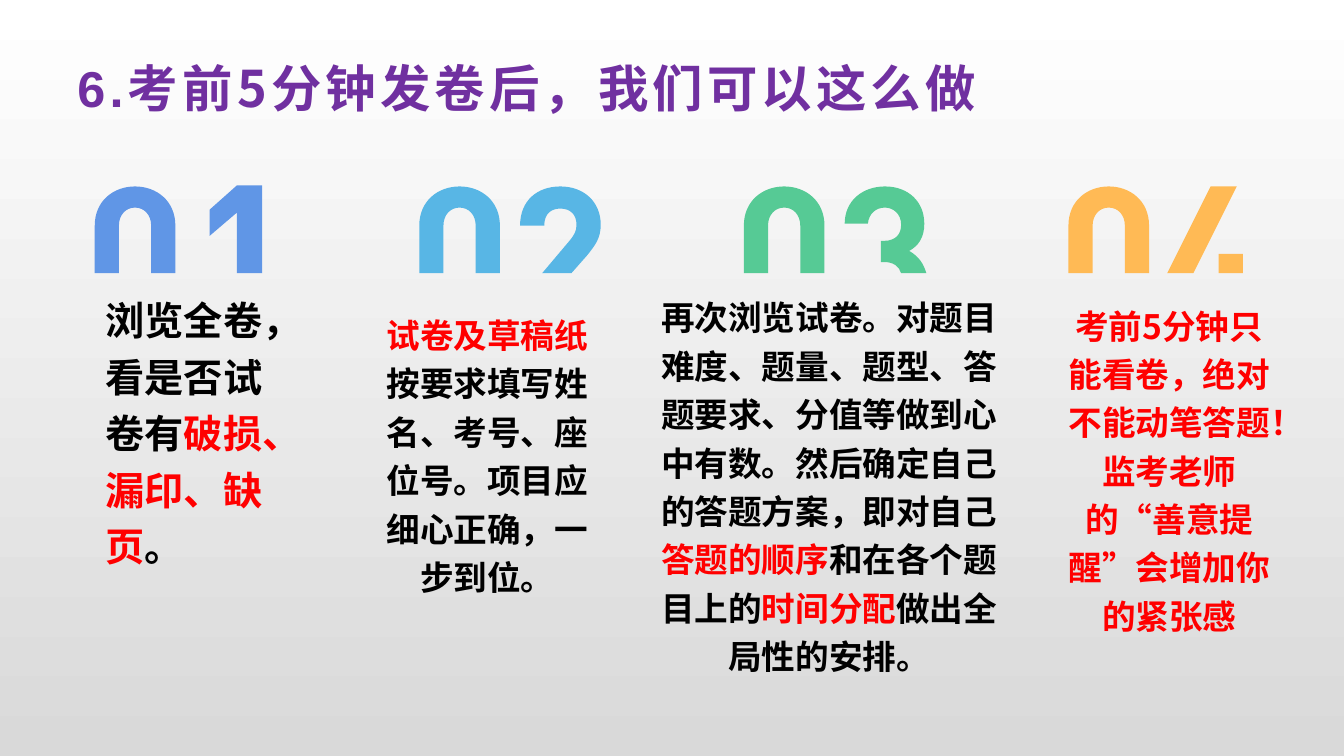
from dataclasses import dataclass

from lxml.etree import SubElement
from pptx import Presentation
from pptx.dml.color import RGBColor
from pptx.enum.text import MSO_ANCHOR, PP_ALIGN
from pptx.oxml.ns import qn
from pptx.util import Inches, Pt

INK = {
    "black": "000000", "red": "FF0000", "purple": "7030A0",
    "blue": "6096E6", "sky": "58B6E5", "green": "56CA95", "gold": "FFBA55",
    "top": "FFFFFF", "base": "D9D9D9",
}
HAN = "Noto Sans CJK SC"
LEFT, TOP, STEP = 0.94, 1.85, 3.22

# Each outline is a list of loops, in inches from the column's corner.
# A pair is a corner; six numbers are a Bezier curve from the last point.
Loop = list[tuple[float, ...]]
ZERO: list[Loop] = [[
    (0.4, 0), (0.61, 0, 0.8, 0.14, 0.8, 0.39), (0.8, 0.86), (0.56, 0.86),
    (0.56, 0.39), (0.56, 0.28, 0.49, 0.21, 0.4, 0.21),
    (0.31, 0.21, 0.24, 0.28, 0.24, 0.39), (0.24, 0.86), (0, 0.86),
    (0, 0.39), (0, 0.14, 0.19, 0, 0.4, 0),
]]
ONE: list[Loop] = [[
    (1.41, -0.01), (1.66, -0.01), (1.66, 0.86), (1.41, 0.86),
    (1.41, 0.26), (1.14, 0.49), (1.14, 0.23),
]]
TWO: list[Loop] = [[
    (1.4, 0), (1.63, 0, 1.8, 0.15, 1.8, 0.38),
    (1.8, 0.51, 1.75, 0.58, 1.66, 0.69), (1.51, 0.86), (1.22, 0.86),
    (1.49, 0.54), (1.54, 0.48, 1.56, 0.44, 1.56, 0.38),
    (1.56, 0.28, 1.5, 0.22, 1.4, 0.22),
    (1.32, 0.22, 1.24, 0.26, 1.24, 0.39), (1, 0.39),
    (1, 0.14, 1.17, 0, 1.4, 0),
]]
THREE: list[Loop] = [[
    (1.4, 0), (1.63, 0, 1.79, 0.15, 1.79, 0.37),
    (1.79, 0.51, 1.73, 0.59, 1.64, 0.64),
    (1.71, 0.68, 1.77, 0.74, 1.8, 0.83), (1.81, 0.86), (1.56, 0.86),
    (1.54, 0.79, 1.48, 0.75, 1.39, 0.75), (1.36, 0.75), (1.36, 0.54),
    (1.39, 0.54), (1.51, 0.54, 1.56, 0.47, 1.56, 0.38),
    (1.56, 0.27, 1.48, 0.21, 1.4, 0.21),
    (1.31, 0.21, 1.24, 0.27, 1.23, 0.37), (1, 0.37),
    (1, 0.14, 1.18, 0, 1.4, 0),
]]
FOUR: list[Loop] = [
    [(1.49, 0.67), (1.73, 0.67), (1.73, 0.86), (1.49, 0.86)],
    [(1.41, 0), (1.67, 0), (1.24, 0.86), (0.98, 0.86)],
]


@dataclass
class Run:
    text: str
    ink: str
    size: float = 24
    face: str = HAN
    track: int = 0


@dataclass
class Note:
    box: tuple[float, float, float, float]
    runs: list[Run]
    align: PP_ALIGN = PP_ALIGN.CENTER
    lead: float = 1.2


@dataclass
class Column:
    ink: str
    digit: list[Loop]
    note: Note


TITLE = Note((0.67, 0.48, 12, 0.77), [
    Run("6.", "purple", 36, "Arial", 300),
    Run("考前5分钟发卷后，我们可以这么做", "purple", 36, HAN, 300),
], PP_ALIGN.LEFT, 1.0)

COLUMNS = [
    Column("blue", ONE, Note((0.95, 2.76, 1.76, 2.98), [
        Run("浏览全卷，看是否试卷有", "black", 28),
        Run("破损、漏印、缺页", "red", 28),
        Run("。", "black", 28),
    ], PP_ALIGN.LEFT)),
    Column("sky", TWO, Note((3.71, 2.97, 2.25, 3.03), [
        Run("试卷及草稿纸", "red"),
        Run("按要求填写姓名、考号、座位号。项目应细心正确，一步到位。", "black"),
    ])),
    Column("green", THREE, Note((6.45, 2.97, 3.55, 3.64), [
        Run("再次浏览试卷。对题目难度、题量、题型、答题要求、分值等做到心中有数。"
            "然后确定自己的答题方案，即对自己", "black"),
        Run("答题的顺序", "red"),
        Run("和在各个题目上的", "black"),
        Run("时间分配", "red"),
        Run("做出全局性的安排。", "black"),
    ])),
    Column("gold", FOUR, Note((10.49, 2.86, 2.22, 3.54), [
        Run("考前5分钟只能看卷，绝对不能动笔答题！"
            "监考老师的“善意提醒”会增加你的紧张感", "red"),
    ])),
]


def tint(name: str) -> RGBColor:
    return RGBColor.from_string(INK[name])


def place(loop: Loop, left: float) -> list[tuple[int, int]]:
    """List every corner and curve handle as a slide point."""
    return [(Inches(left + x), Inches(TOP + y))
            for part in loop for x, y in zip(part[::2], part[1::2])]


def bend(shape, loops: list[Loop]) -> None:
    """Join each curve's three straight steps into one Bezier step."""
    steps = shape._element.iter(qn("a:lnTo"))
    queue = iter(list(steps))
    for part in (part for loop in loops for part in loop[1:]):
        curve = next(queue)
        if len(part) == 6:
            curve.tag = qn("a:cubicBezTo")
            for step in (next(queue), next(queue)):
                curve.append(step[0])
                step.getparent().remove(step)


def draw_digit(shapes, loops: list[Loop], left: float, ink: str) -> None:
    first, *rest = [place(loop, left) for loop in loops]
    pen = shapes.build_freeform(*first[0], scale=1.0)
    pen.add_line_segments(first[1:], close=True)
    for dots in rest:
        pen.move_to(*dots[0])
        pen.add_line_segments(dots[1:], close=True)
    shape = pen.convert_to_shape()
    bend(shape, loops)
    shape.shadow.inherit = False
    shape.fill.solid()
    shape.fill.fore_color.rgb = tint(ink)
    shape.line.fill.background()


def add_note(shapes, note: Note) -> None:
    frame = shapes.add_textbox(*map(Inches, note.box)).text_frame
    frame.word_wrap = True
    frame.vertical_anchor = MSO_ANCHOR.MIDDLE
    para = frame.paragraphs[0]
    para.alignment = note.align
    para.line_spacing = note.lead
    for item in note.runs:
        run = para.add_run()
        run.text = item.text
        font = run.font
        font.size, font.bold, font.name = Pt(item.size), True, item.face
        font.color.rgb = tint(item.ink)
        props = run._r.get_or_add_rPr()
        SubElement(props, qn("a:ea")).set("typeface", HAN)
        if item.track:
            props.set("spc", str(item.track))


def main() -> None:
    deck = Presentation()
    deck.slide_width, deck.slide_height = Inches(40 / 3), Inches(7.5)
    slide = deck.slides.add_slide(deck.slide_layouts[6])
    fill = slide.background.fill
    fill.gradient()
    fill.gradient_angle = 270
    for stop, name, spot in zip(fill.gradient_stops, ("top", "base"), (0, 1)):
        stop.color.rgb = tint(name)
        stop.position = spot
    for n, col in enumerate(COLUMNS):
        group = slide.shapes.add_group_shape().shapes
        add_note(group, col.note)
        for digit in (ZERO, col.digit):
            draw_digit(group, digit, LEFT + n * STEP, col.ink)
    add_note(slide.shapes, TITLE)
    deck.save("out.pptx")


if __name__ == "__main__":
    main()
